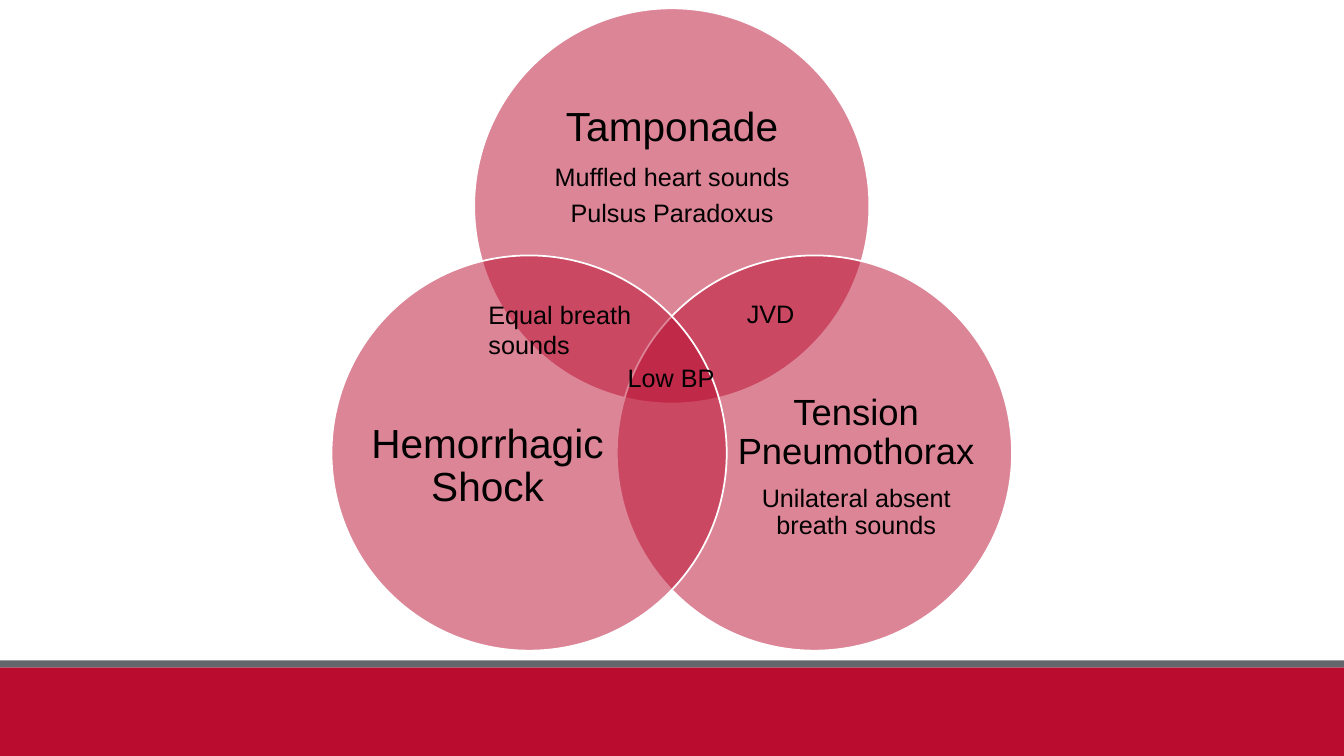
from dataclasses import dataclass
from math import sqrt

from lxml.etree import SubElement
from pptx import Presentation
from pptx.dml.color import RGBColor
from pptx.enum.shapes import MSO_SHAPE as Kind
from pptx.enum.text import MSO_ANCHOR as Anchor, PP_ALIGN as Align
from pptx.oxml.ns import qn
from pptx.util import Cm, Pt

RED = RGBColor(0xBA, 0x0C, 0x2F)
GRAY = RGBColor(0x63, 0x66, 0x6A)
WHITE = RGBColor(0xFF, 0xFF, 0xFF)
BLACK = RGBColor(0, 0, 0)
FONT = "Arial"
WIDE, HIGH = 33.87, 19.05
SIZE = 9.96
SIDE = 7.19
MID_X, TOP_Y = 16.93, 5.19
LOW_Y = TOP_Y + SIDE * sqrt(3) / 2
BODY = 18


@dataclass(frozen=True)
class Box:
    left: float
    top: float
    width: float
    height: float

    def cm(self) -> tuple:
        return Cm(self.left), Cm(self.top), Cm(self.width), Cm(self.height)


@dataclass(frozen=True)
class Disc:
    x: float
    y: float
    box: Box
    title: str
    size: int
    signs: tuple[str, ...] = ()


@dataclass(frozen=True)
class Label:
    box: Box
    text: str


BANDS = (
    (Box(0, 16.82, WIDE, HIGH - 16.82), RED),
    (Box(0, 16.64, WIDE, 0.18), GRAY),
)
DISCS = (
    Disc(MID_X, TOP_Y, Box(13.28, 1.96, 7.32, 4.5), "Tamponade", 29,
         ("Muffled heart sounds", "Pulsus Paradoxus")),
    Disc(MID_X + SIDE / 2, LOW_Y, Box(18.38, 9.02, 6.4, 5.49),
         "Tension Pneumothorax", 26, ("Unilateral absent breath sounds",)),
    Disc(MID_X - SIDE / 2, LOW_Y, Box(9.09, 9.02, 6.4, 5.49),
         "Hemorrhagic Shock", 29),
)
LABELS = (
    Label(Box(15.57, 9, 2.72, 1.02), "Low BP"),
    Label(Box(18.57, 7.39, 2.16, 1.02), "JVD"),
    Label(Box(12.06, 7.42, 4.88, 1.8), "Equal breath sounds"),
)


def add_form(slide, kind: Kind, box: Box, fill: RGBColor):
    form = slide.shapes.add_shape(kind, *box.cm())
    form.shadow.inherit = False
    form.fill.solid()
    form.fill.fore_color.rgb = fill
    form.line.fill.background()
    return form


def add_frame(slide, box: Box):
    frame = slide.shapes.add_textbox(*box.cm()).text_frame
    frame.word_wrap = True
    return frame


def add_run(para, text: str, size: int) -> None:
    run = para.add_run()
    run.text = text
    run.font.name = FONT
    run.font.size = Pt(size)
    run.font.color.rgb = BLACK


def add_disc(slide, disc: Disc) -> None:
    area = Box(disc.x - SIZE / 2, disc.y - SIZE / 2, SIZE, SIZE)
    form = add_form(slide, Kind.OVAL, area, RED)
    tint = form.fill._xPr.find(qn("a:solidFill"))[0]
    SubElement(tint, qn("a:alpha")).set("val", "50000")
    form.line.color.rgb = WHITE
    form.line.width = Pt(1.25)

    frame = add_frame(slide, disc.box)
    frame.vertical_anchor = Anchor.MIDDLE
    frame.margin_left = frame.margin_right = 0
    frame.margin_top = frame.margin_bottom = 0
    rows = [(disc.title, disc.size), *((sign, BODY) for sign in disc.signs)]
    for i, (text, size) in enumerate(rows):
        para = frame.add_paragraph() if i else frame.paragraphs[0]
        para.alignment = Align.CENTER
        para.line_spacing = 0.9
        para.space_after = Pt(size * 0.35)
        add_run(para, text, size)


def add_label(slide, label: Label) -> None:
    frame = add_frame(slide, label.box)
    add_run(frame.paragraphs[0], label.text, BODY)


def main() -> None:
    deck = Presentation()
    deck.slide_width, deck.slide_height = Cm(WIDE), Cm(HIGH)
    slide = deck.slides.add_slide(deck.slide_layouts[6])
    for box, fill in BANDS:
        add_form(slide, Kind.RECTANGLE, box, fill)
    for disc in DISCS:
        add_disc(slide, disc)
    for label in LABELS:
        add_label(slide, label)
    deck.save("out.pptx")


if __name__ == "__main__":
    main()
